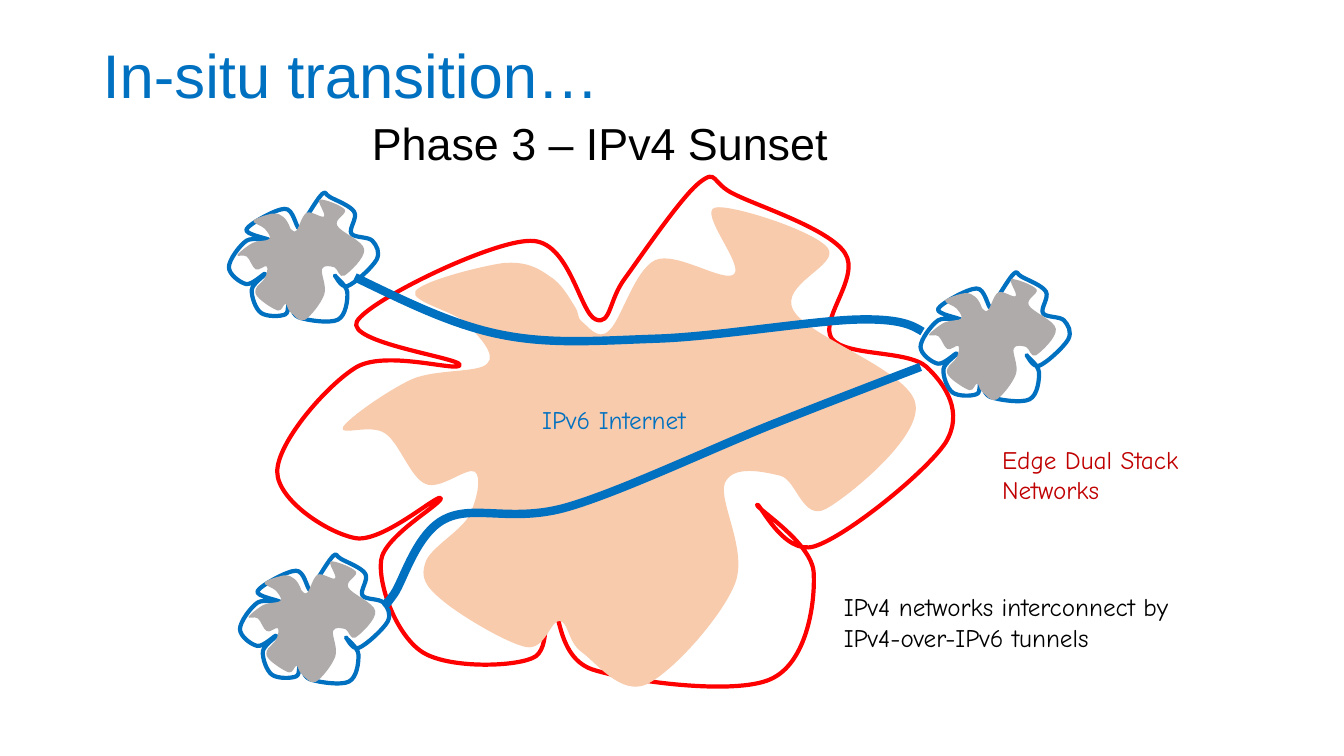
import lxml.etree
import pptx
import pptx.dml.color
import pptx.enum.text
import pptx.oxml.ns
import pptx.util

BLUE = pptx.dml.color.RGBColor(0x00, 0x70, 0xC0)
RED = pptx.dml.color.RGBColor(0xFF, 0x00, 0x00)
DARK_RED = pptx.dml.color.RGBColor(0xC0, 0x00, 0x00)
BLACK = pptx.dml.color.RGBColor(0x00, 0x00, 0x00)
PEACH = pptx.dml.color.RGBColor(0xF8, 0xCB, 0xAD)
GREY = pptx.dml.color.RGBColor(0xAF, 0xAB, 0xAB)

COLUMNS, ROWS = 1333, 750

EDGE_BOX = (275, 175, 670, 506)
EDGE_START = (591, 317)
EDGE_CURVES = [
    (575, 311, 565, 238, 526, 239), (487, 239, 366, 298, 354, 319),
    (343, 340, 456, 355, 456, 362), (456, 370, 385, 347, 354, 364),
    (324, 382, 275, 439, 275, 468), (275, 496, 325, 529, 353, 534),
    (380, 538, 433, 491, 437, 494), (442, 498, 381, 531, 378, 556),
    (375, 582, 394, 631, 419, 647), (444, 663, 507, 662, 528, 653),
    (549, 645, 536, 596, 546, 598), (556, 599, 551, 651, 587, 664),
    (623, 676, 728, 690, 764, 674), (801, 658, 809, 596, 807, 567),
    (804, 538, 751, 505, 751, 501), (752, 496, 777, 552, 808, 542),
    (840, 532, 919, 468, 938, 439), (956, 409, 938, 382, 919, 364),
    (900, 347, 839, 354, 825, 336), (812, 317, 854, 275, 838, 251),
    (822, 227, 753, 205, 729, 193), (705, 182, 712, 167, 694, 181),
    (676, 195, 636, 254, 620, 276), (604, 297, 606, 323, 591, 317),
]

CORE_BOX = (340, 206, 569, 475)
CORE_START = (577, 319)
CORE_CURVES = [
    (572, 315, 575, 311, 570, 304), (565, 296, 557, 281, 545, 274),
    (534, 266, 522, 259, 499, 261), (477, 264, 418, 279, 412, 289),
    (406, 299, 451, 309, 463, 321), (475, 334, 493, 352, 483, 361),
    (474, 370, 433, 366, 409, 376), (385, 387, 345, 415, 340, 424),
    (336, 433, 368, 420, 382, 430), (396, 439, 407, 474, 422, 480),
    (436, 487, 463, 463, 471, 468), (478, 473, 473, 497, 465, 512),
    (457, 527, 426, 544, 422, 558), (417, 572, 421, 581, 438, 595),
    (454, 609, 502, 638, 522, 642), (541, 645, 546, 615, 555, 616),
    (564, 617, 563, 637, 577, 647), (592, 658, 616, 690, 641, 679),
    (667, 667, 716, 612, 729, 579), (742, 546, 712, 497, 719, 479),
    (727, 461, 757, 468, 774, 472), (790, 476, 796, 517, 819, 505),
    (841, 493, 914, 434, 908, 401), (903, 368, 801, 334, 787, 308),
    (772, 282, 834, 263, 821, 246), (808, 229, 724, 202, 709, 206),
    (693, 211, 738, 263, 728, 272), (718, 281, 671, 249, 650, 258),
    (629, 268, 616, 318, 604, 328), (593, 339, 583, 323, 577, 319),
]

UPPER_TUNNEL_BOX = (352, 275, 563, 64)
UPPER_TUNNEL_START = (352, 275)
UPPER_TUNNEL_CURVES = [
    (400, 298, 447, 322, 497, 332), (547, 342, 593, 338, 652, 336),
    (711, 334, 807, 318, 851, 317), (894, 316, 905, 323, 915, 329),
]
LOWER_TUNNEL_BOX = (384, 364, 530, 235)
LOWER_TUNNEL_START = (385, 596)
LOWER_TUNNEL_CURVES = [
    (383, 599, 381, 603, 391, 589), (400, 576, 413, 529, 441, 515),
    (470, 500, 508, 519, 563, 503), (618, 487, 712, 442, 771, 419),
    (829, 396, 913, 364, 913, 364),
]


def write_text(frame, text, font="Comic Neue", size=18, color=BLACK, spacing=None):
    for number, sentence in enumerate(text.split("\n")):
        paragraph = frame.add_paragraph() if number else frame.paragraphs[0]
        if spacing:
            paragraph.line_spacing = spacing
        run = paragraph.add_run()
        run.text = sentence
        run.font.name = font
        run.font.size = pptx.util.Pt(size)
        run.font.color.rgb = color


class TransitionSlide:
    def __init__(self, deck):
        self.slide = deck.slides.add_slide(deck.slide_layouts[6])
        self.column = deck.slide_width / COLUMNS
        self.row = deck.slide_height / ROWS

    def place(self, x, y):
        return round(x * self.column), round(y * self.row)

    def label(self, left, top, width, height, text, wrap=False, grow=True, **style):
        box = self.slide.shapes.add_textbox(*self.place(left, top), *self.place(width, height))
        frame = box.text_frame
        frame.word_wrap = wrap
        if grow:
            frame.auto_size = pptx.enum.text.MSO_AUTO_SIZE.SHAPE_TO_FIT_TEXT
        write_text(frame, text, **style)

    def curve(self, start, curves, source, target, fill=None, line=None, weight=3, closed=True):
        left, top, width, height = target
        right, bottom = left + width, top + height
        builder = self.slide.shapes.build_freeform(*self.place(left, top))
        builder.add_line_segments([self.place(right, top), self.place(right, bottom),
                                   self.place(left, bottom)])
        shape = builder.convert_to_shape()
        self.bend(shape, start, curves, source, target, closed)
        shape.shadow.inherit = False
        if fill is None:
            shape.fill.background()
        else:
            shape.fill.solid()
            shape.fill.fore_color.rgb = fill
        if line is None:
            shape.line.fill.background()
        else:
            shape.line.color.rgb = line
            shape.line.width = pptx.util.Pt(weight)

    def bend(self, shape, start, curves, source, target, closed):
        qn = pptx.oxml.ns.qn
        outline = next(shape.element.iter(qn("a:path")))
        for corner in list(outline):
            outline.remove(corner)
        steps = [("a:moveTo", start)] + [("a:cubicBezTo", bend) for bend in curves]
        for tag, numbers in steps:
            step = lxml.etree.SubElement(outline, qn(tag))
            for x, y in zip(numbers[::2], numbers[1::2]):
                across, down = self.place((x - source[0]) * target[2] / source[2],
                                          (y - source[1]) * target[3] / source[3])
                lxml.etree.SubElement(step, qn("a:pt"), x=str(across), y=str(down))
        if closed:
            lxml.etree.SubElement(outline, qn("a:close"))

    def network(self, edge_box, core_box, edge_color, core_color):
        self.curve(EDGE_START, EDGE_CURVES, EDGE_BOX, edge_box, line=edge_color)
        self.curve(CORE_START, CORE_CURVES, CORE_BOX, core_box, fill=core_color)

    def edge_network(self, left, top):
        self.network((left, top, 148, 128), (left + 8.5, top + 7, 126, 120), BLUE, GREY)

    def tunnel(self, start, curves, box):
        self.curve(start, curves, box, box, line=BLUE, weight=6, closed=False)


def main():
    deck = pptx.Presentation()
    deck.slide_width = pptx.util.Inches(13.33)
    deck.slide_height = pptx.util.Inches(7.5)
    transition = TransitionSlide(deck)
    transition.label(92, 40, 1023, 143, "In-situ transition…", wrap=True, grow=False,
                     font="Arial", size=44, color=BLUE, spacing=0.9)
    transition.network(EDGE_BOX, CORE_BOX, RED, PEACH)
    transition.label(528, 396, 200, 40, "IPv6 Internet", color=BLUE)
    transition.label(359, 110, 587, 64, "Phase 3 – IPv4 Sunset", font="Arial", size=32)
    transition.edge_network(913, 270)
    transition.label(984, 436, 277, 71, "Edge Dual Stack Networks", wrap=True, color=DARK_RED)
    transition.tunnel(UPPER_TUNNEL_START, UPPER_TUNNEL_CURVES, UPPER_TUNNEL_BOX)
    transition.tunnel(LOWER_TUNNEL_START, LOWER_TUNNEL_CURVES, LOWER_TUNNEL_BOX)
    transition.label(827, 582, 421, 71,
                     "IPv4 networks interconnect by\nIPv4-over-IPv6 tunnels")
    transition.edge_network(227, 191)
    transition.edge_network(238, 550)
    deck.save("out.pptx")


if __name__ == "__main__":
    main()
